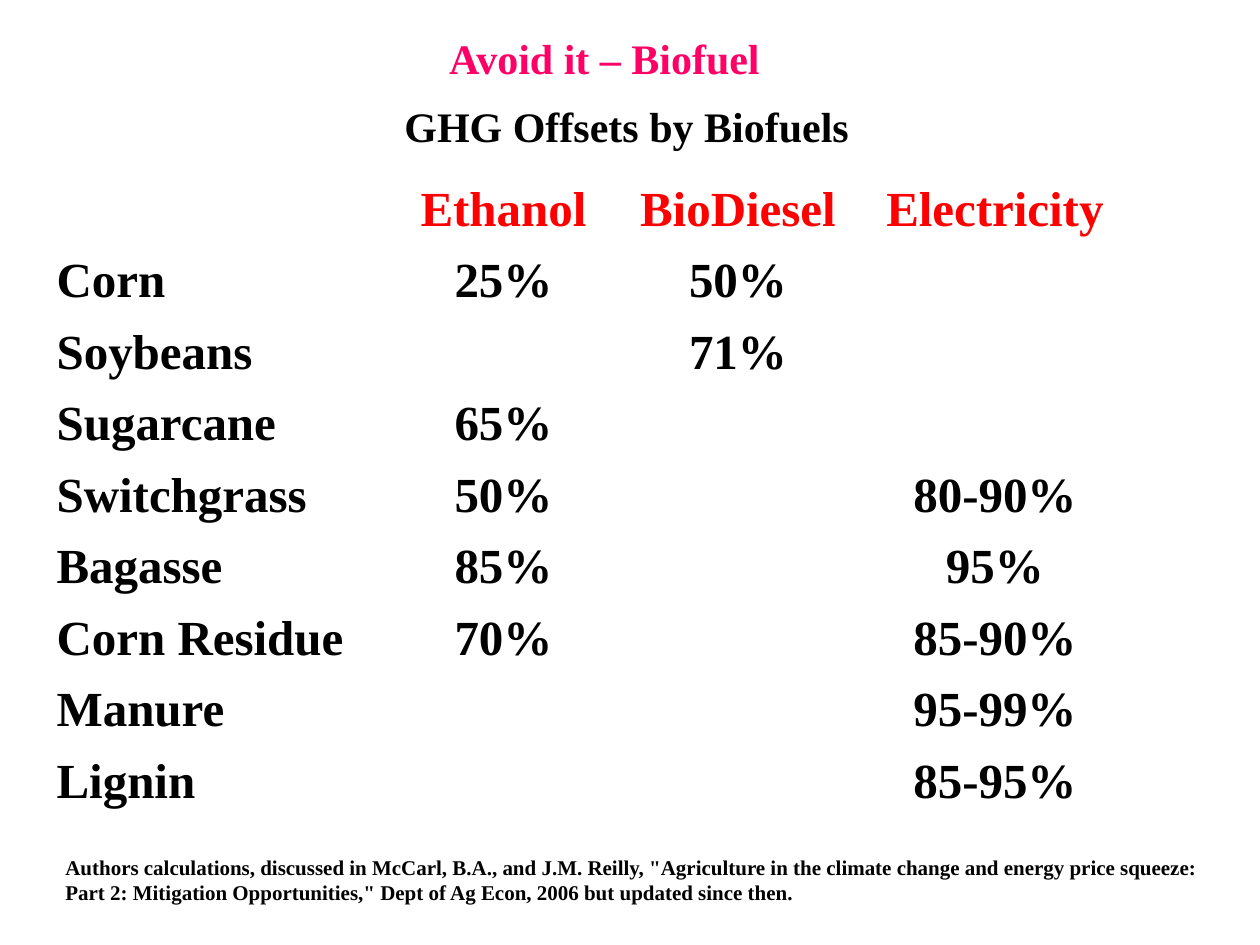
"""Build a slide with a table of greenhouse gas offsets by biofuel."""
from typing import NamedTuple

from pptx import Presentation
from pptx.dml.color import RGBColor
from pptx.enum.text import MSO_ANCHOR, MSO_AUTO_SIZE, PP_ALIGN
from pptx.util import Emu, Pt

LEFT, CENTER = PP_ALIGN.LEFT, PP_ALIGN.CENTER
TOP, MIDDLE, BOTTOM = MSO_ANCHOR.TOP, MSO_ANCHOR.MIDDLE, MSO_ANCHOR.BOTTOM
FIT_SHAPE, FIXED = MSO_AUTO_SIZE.SHAPE_TO_FIT_TEXT, MSO_AUTO_SIZE.NONE

PX_PER_INCH = 126
FONT = "Times New Roman"
COLORS = {"title": "FF0066", "heading": "FF0000", "body": "000000"}


class TextBlock(NamedTuple):
    """A text box with one paragraph, placed in px."""
    text: str
    left: int
    top: int
    width: int
    height: int
    size: int
    color: str = "body"
    alignment: PP_ALIGN = LEFT
    anchor: MSO_ANCHOR = TOP
    auto_size: MSO_AUTO_SIZE = FIT_SHAPE
    wrap: bool = False


class Offset(NamedTuple):
    """The offsets that one feedstock reaches in each fuel."""
    feedstock: str
    ethanol: str = ""
    biodiesel: str = ""
    electricity: str = ""


TEXT_BLOCKS = [
    TextBlock("GHG Offsets by Biofuels", 392, 94, 470, 63, 24),
    TextBlock("Avoid it – Biofuel", 116, 21, 977, 73, 24, "title",
              CENTER, MIDDLE, FIXED),
    TextBlock("Authors calculations, discussed in McCarl, B.A., and J.M. Reilly, "
              '"Agriculture in the climate change and energy price squeeze: '
              'Part 2: Mitigation Opportunities," Dept of Ag Econ, 2006 but '
              "updated since then.", 53, 848, 1177, 63, 12, wrap=True),
]
HEADINGS = Offset("", "Ethanol", "BioDiesel", "Electricity")
OFFSETS = [
    Offset("Corn", ethanol="25%", biodiesel="50%"),
    Offset("Soybeans", biodiesel="71%"),
    Offset("Sugarcane", ethanol="65%"),
    Offset("Switchgrass", ethanol="50%", electricity="80-90%"),
    Offset("Bagasse", ethanol="85%", electricity="95%"),
    Offset("Corn Residue", ethanol="70%", electricity="85-90%"),
    Offset("Manure", electricity="95-99%"),
    Offset("Lignin", electricity="85-95%"),
]
TABLE_LEFT, TABLE_TOP = 44, 159
COLUMN_WIDTHS = [353, 213, 256, 258]
HEADING_HEIGHT, BODY_HEIGHT = 84, 572
TABLE_TEXT_SIZE = 28


def px(length: int) -> Emu:
    """Turn px into EMU."""
    return Emu(length * 914400 // PX_PER_INCH)


def add_run(paragraph, text: str, size: int, color: str) -> None:
    """Add one bold run to a paragraph."""
    run = paragraph.add_run()
    run.text = text
    run.font.name = FONT
    run.font.size = Pt(size)
    run.font.bold = True
    run.font.color.rgb = RGBColor.from_string(COLORS[color])


def add_text_block(slide, block: TextBlock) -> None:
    """Draw one text box."""
    shape = slide.shapes.add_textbox(px(block.left), px(block.top),
                                     px(block.width), px(block.height))
    frame = shape.text_frame
    frame.word_wrap = block.wrap
    frame.auto_size = block.auto_size
    frame.vertical_anchor = block.anchor
    paragraph = frame.paragraphs[0]
    paragraph.alignment = block.alignment
    add_run(paragraph, block.text, block.size, block.color)


def fill_cell(cell, text: str, color: str, alignment: PP_ALIGN) -> None:
    """Clear the fill of a cell and write its text."""
    cell.fill.background()
    cell.vertical_anchor = BOTTOM
    if text:
        paragraph = cell.text_frame.paragraphs[0]
        paragraph.alignment = alignment
        add_run(paragraph, text, TABLE_TEXT_SIZE, color)


def add_offset_table(slide, offsets: list[Offset]) -> None:
    """Draw the table of offsets under its headings."""
    rows = [HEADINGS, *offsets]
    shape = slide.shapes.add_table(
        len(rows), len(COLUMN_WIDTHS), px(TABLE_LEFT), px(TABLE_TOP),
        px(sum(COLUMN_WIDTHS)), px(HEADING_HEIGHT + BODY_HEIGHT))
    table = shape.table
    table.first_row = False
    table.horz_banding = False
    for column, width in zip(table.columns, COLUMN_WIDTHS):
        column.width = px(width)
    for row_index, offset in enumerate(rows):
        is_heading = row_index == 0
        table.rows[row_index].height = (
            px(HEADING_HEIGHT) if is_heading
            else Emu(px(BODY_HEIGHT) // len(offsets)))
        for column_index, text in enumerate(offset):
            fill_cell(table.cell(row_index, column_index), text,
                      "heading" if is_heading else "body",
                      CENTER if column_index else LEFT)


def main() -> None:
    """Build and save the presentation."""
    presentation = Presentation()
    presentation.slide_width = px(1260)
    presentation.slide_height = px(945)
    slide = presentation.slides.add_slide(presentation.slide_layouts[6])
    for block in TEXT_BLOCKS:
        add_text_block(slide, block)
    add_offset_table(slide, OFFSETS)
    presentation.save("out.pptx")


if __name__ == "__main__":
    main()
